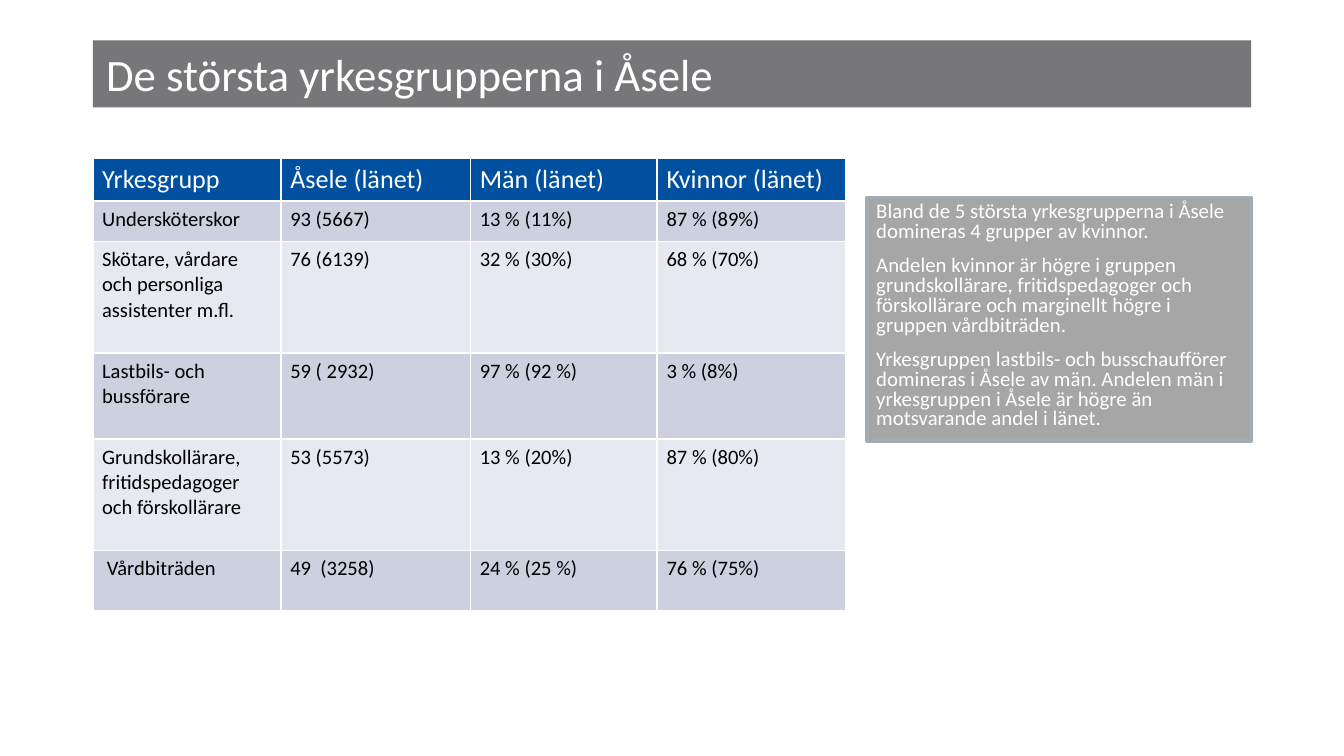
from pptx import Presentation
from pptx.dml.color import RGBColor
from pptx.enum.shapes import MSO_SHAPE
from pptx.enum.text import MSO_ANCHOR, MSO_AUTO_SIZE, PP_ALIGN
from pptx.util import Inches, Pt

FONT = "Calibri"
COLORS = {
    "white": "FFFFFF", "black": "000000", "title": "77777A",
    "head": "0050A0", "odd": "CCD0DF", "even": "E7E9F0",
    "note": "A6A6A6", "edge": "A3ABB6",
}
WIDTH = 10
HEIGHT = WIDTH * 9 / 16
LEFT, RIGHT = 0.69, 9.31
PAD_X, PAD_Y = 0.07, 0.04
COLS = [1.4, 1.41, 1.39, 1.4]
ROWS = [0.3, 0.3, 0.83, 0.64, 0.83, 0.45]
JOBS = [
    ["Yrkesgrupp", "Åsele (länet)", "Män (länet)", "Kvinnor (länet)"],
    ["Undersköterskor", "93 (5667)", "13 % (11%)", "87 % (89%)"],
    ["Skötare, vårdare och personliga assistenter m.fl.",
     "76 (6139)", "32 % (30%)", "68 % (70%)"],
    ["Lastbils- och bussförare", "59 ( 2932)", "97 % (92 %)", "3 % (8%)"],
    ["Grundskollärare, fritidspedagoger och förskollärare",
     "53 (5573)", "13 % (20%)", "87 % (80%)"],
    [" Vårdbiträden", "49  (3258)", "24 % (25 %)", "76 % (75%)"],
]
NOTES = [
    "Bland de 5 största yrkesgrupperna i Åsele domineras 4 grupper av kvinnor.",
    "Andelen kvinnor är högre i gruppen grundskollärare, fritidspedagoger "
    "och förskollärare och marginellt högre i gruppen vårdbiträden.",
    "Yrkesgruppen lastbils- och busschaufförer domineras i Åsele av män. "
    "Andelen män i yrkesgruppen i Åsele är högre än motsvarande andel i länet.",
]


def paint(fill, name):
    fill.solid()
    fill.fore_color.rgb = RGBColor.from_string(COLORS[name])


def write(para, text, size, color):
    para.alignment = PP_ALIGN.LEFT
    run = para.add_run()
    run.text = text
    font = run.font
    font.name, font.size, font.bold = FONT, Pt(size), False
    font.color.rgb = RGBColor.from_string(COLORS[color])


def inset(box):
    """Set the narrow margins shared by the cells and the note."""
    box.margin_left = box.margin_right = Inches(PAD_X)
    box.margin_top = box.margin_bottom = Inches(PAD_Y)


def add_title(slide, text):
    title = slide.shapes.title
    title.left, title.top = Inches(LEFT), Inches(0.3)
    title.width, title.height = Inches(RIGHT - LEFT), Inches(0.5)
    paint(title.fill, "title")
    frame = title.text_frame
    frame.auto_size = MSO_AUTO_SIZE.NONE
    frame.vertical_anchor = MSO_ANCHOR.MIDDLE
    write(frame.paragraphs[0], text, 24, "white")


def add_jobs(slide):
    table = slide.shapes.add_table(
        len(ROWS), len(COLS), Inches(LEFT), Inches(1.18),
        Inches(sum(COLS)), Inches(sum(ROWS))).table
    for col, width in zip(table.columns, COLS):
        col.width = Inches(width)
    for r, (row, height) in enumerate(zip(table.rows, ROWS)):
        row.height = Inches(height)
        shade = "head" if r == 0 else "odd" if r % 2 else "even"
        size, color = (14, "white") if r == 0 else (11, "black")
        for cell, text in zip(row.cells, JOBS[r]):
            inset(cell)
            paint(cell.fill, shade)
            write(cell.text_frame.paragraphs[0], text, size, color)


def add_note(slide):
    left = 6.45
    box = slide.shapes.add_shape(
        MSO_SHAPE.RECTANGLE, Inches(left), Inches(1.47),
        Inches(RIGHT - left), Inches(1.81))
    box.shadow.inherit = False
    paint(box.fill, "note")
    paint(box.line.fill, "edge")
    box.line.width = Pt(2)
    frame = box.text_frame
    frame.word_wrap = True
    frame.vertical_anchor = MSO_ANCHOR.TOP
    inset(frame)
    for i, text in enumerate(NOTES):
        para = frame.add_paragraph() if i else frame.paragraphs[0]
        para.line_spacing = 0.8
        if i:
            para.space_before = Pt(7.5)
        write(para, text, 11.1, "white")


def main():
    deck = Presentation()
    deck.slide_width, deck.slide_height = Inches(WIDTH), Inches(HEIGHT)
    slide = deck.slides.add_slide(deck.slide_layouts[5])
    add_title(slide, "De största yrkesgrupperna i Åsele")
    add_jobs(slide)
    add_note(slide)
    deck.save("out.pptx")


if __name__ == "__main__":
    main()
